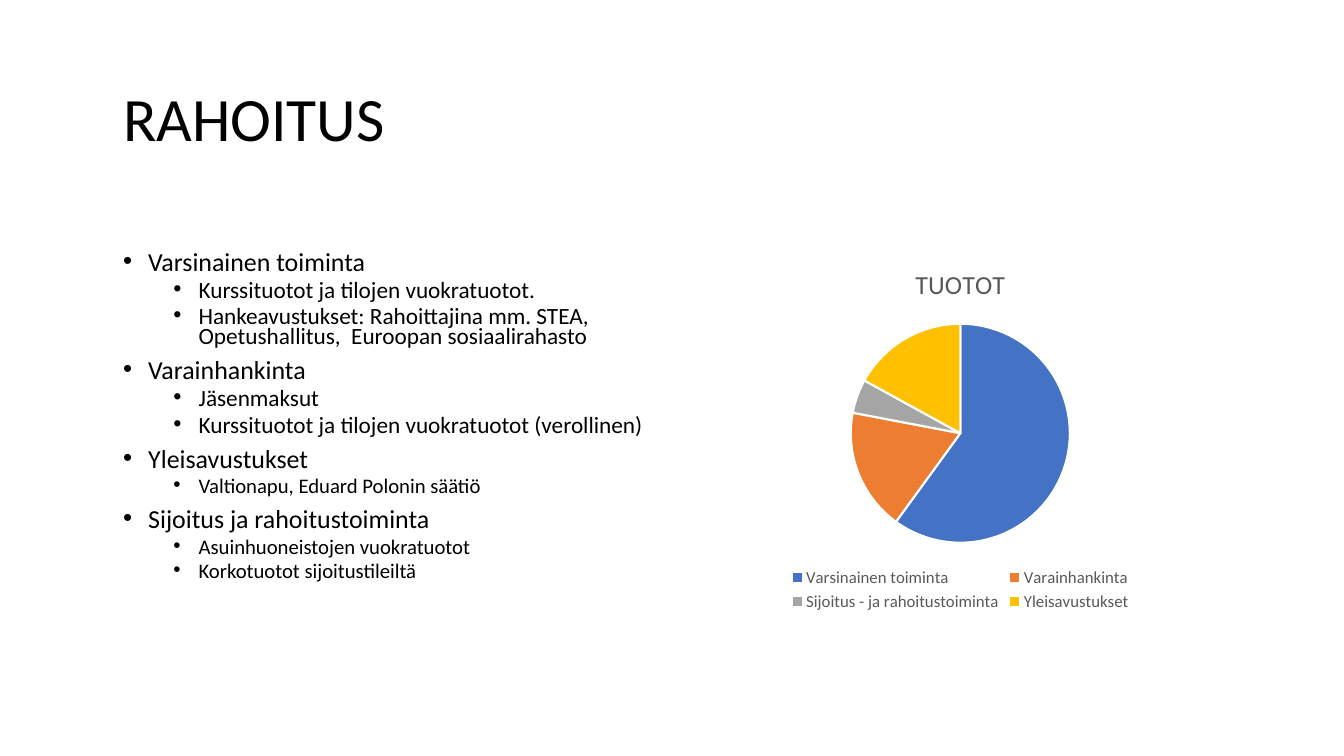
import pptx
import pptx.chart.data
import pptx.dml.color
import pptx.enum.chart
import pptx.enum.text
import pptx.oxml
import pptx.oxml.ns
import pptx.util

PX = 9144
FONT = "Calibri"
COLORS = {
    "text": "000000",
    "muted": "595959",
    "background": "FFFFFF",
    "blue": "4472C4",
    "orange": "ED7D31",
    "gray": "A5A5A5",
    "yellow": "FFC000",
}
FUNDING = [
    ("Varsinainen toiminta", 16.6, [
        "Kurssituotot ja tilojen vuokratuotot.",
        "Hankeavustukset: Rahoittajina mm. STEA, Opetushallitus,  Euroopan sosiaalirahasto",
    ]),
    ("Varainhankinta", 16.6, [
        "Jäsenmaksut",
        "Kurssituotot ja tilojen vuokratuotot (verollinen)",
    ]),
    ("Yleisavustukset", 14.8, ["Valtionapu, Eduard Polonin säätiö"]),
    ("Sijoitus ja rahoitustoiminta", 14.8, [
        "Asuinhuoneistojen vuokratuotot",
        "Korkotuotot sijoitustileiltä",
    ]),
]
INCOME = [
    ("Varsinainen toiminta", 60, "blue"),
    ("Varainhankinta", 18, "orange"),
    ("Sijoitus - ja rahoitustoiminta", 5, "gray"),
    ("Yleisavustukset", 17, "yellow"),
]


def px(length):
    """Turn a length in px into EMU."""
    return pptx.util.Emu(length * PX)


def rgb(name):
    """Look up a named colour."""
    return pptx.dml.color.RGBColor.from_string(COLORS[name])


def style_font(font, size, color):
    """Set the typeface, size and colour of a font."""
    font.name = FONT
    font.size = pptx.util.Pt(size)
    font.color.rgb = rgb(color)


def place(shape, box):
    """Move a placeholder to a box given in px."""
    shape.left, shape.top, shape.width, shape.height = map(px, box)
    shape.text_frame.auto_size = pptx.enum.text.MSO_AUTO_SIZE.NONE
    shape.text_frame.word_wrap = True


def add_title(slide, box, text):
    """Fill the title placeholder."""
    shape = slide.shapes.title
    place(shape, box)
    shape.text_frame.vertical_anchor = pptx.enum.text.MSO_ANCHOR.MIDDLE
    paragraph = shape.text_frame.paragraphs[0]
    paragraph.alignment = pptx.enum.text.PP_ALIGN.LEFT
    paragraph.line_spacing = 0.9
    run = paragraph.add_run()
    run.text = text
    style_font(run.font, 44, "text")


def add_bullet(paragraph, level, size, text):
    """Write one bulleted line at an outline level."""
    paragraph.level = level
    paragraph.line_spacing = 0.7
    paragraph.space_before = pptx.util.Pt(5 if level else 10)
    properties = paragraph._p.get_or_add_pPr()
    properties.set("marL", str(px(25 + 50 * level)))
    properties.set("indent", str(px(-25)))
    namespace = pptx.oxml.ns.nsdecls("a")
    for bullet in ('buFont %s typeface="Arial"', 'buChar %s char="•"'):
        properties.append(pptx.oxml.parse_xml(f"<a:{bullet % namespace}/>"))
    run = paragraph.add_run()
    run.text = text
    style_font(run.font, size, "text")


def add_funding_list(slide, box):
    """Fill the body placeholder with the two-level list."""
    shape = slide.placeholders[1]
    place(shape, box)
    lines = []
    for heading, size, details in FUNDING:
        lines.append((0, 18.5, heading))
        lines.extend((1, size, detail) for detail in details)
    frame = shape.text_frame
    for index, line in enumerate(lines):
        paragraph = frame.add_paragraph() if index else frame.paragraphs[0]
        add_bullet(paragraph, *line)


def add_income_chart(slide, box):
    """Draw the pie chart of income with its title and legend."""
    names, values, colors = zip(*INCOME)
    data = pptx.chart.data.CategoryChartData()
    data.categories = names
    data.add_series("Series 1", values)
    chart = slide.shapes.add_chart(
        pptx.enum.chart.XL_CHART_TYPE.PIE, *map(px, box), data).chart
    style_font(chart.font, 10, "text")

    chart.has_title = True
    run = chart.chart_title.text_frame.paragraphs[0].add_run()
    run.text = "TUOTOT"
    style_font(run.font, 18.6, "muted")
    run.font.bold = False
    chart.chart_title.include_in_layout = False

    chart.has_legend = True
    chart.legend.position = pptx.enum.chart.XL_LEGEND_POSITION.BOTTOM
    chart.legend.include_in_layout = False
    style_font(chart.legend.font, 12, "muted")

    plot = chart.plots[0]
    plot.vary_by_categories = True
    for index, color in enumerate(colors):
        slice_format = plot.series[0].points[index].format
        slice_format.fill.solid()
        slice_format.fill.fore_color.rgb = rgb(color)
        slice_format.line.color.rgb = rgb("background")
        slice_format.line.width = pptx.util.Pt(1.5)


def main():
    """Build the funding slide and save it."""
    presentation = pptx.Presentation()
    presentation.slide_width = px(1333)
    presentation.slide_height = px(750)
    slide = presentation.slides.add_slide(presentation.slide_layouts[1])
    add_title(slide, (112, 46, 1109, 150), "RAHOITUS")
    add_funding_list(slide, (112, 247, 550, 364))
    add_income_chart(slide, (671, 247, 563, 364))
    presentation.save("out.pptx")


if __name__ == "__main__":
    main()
